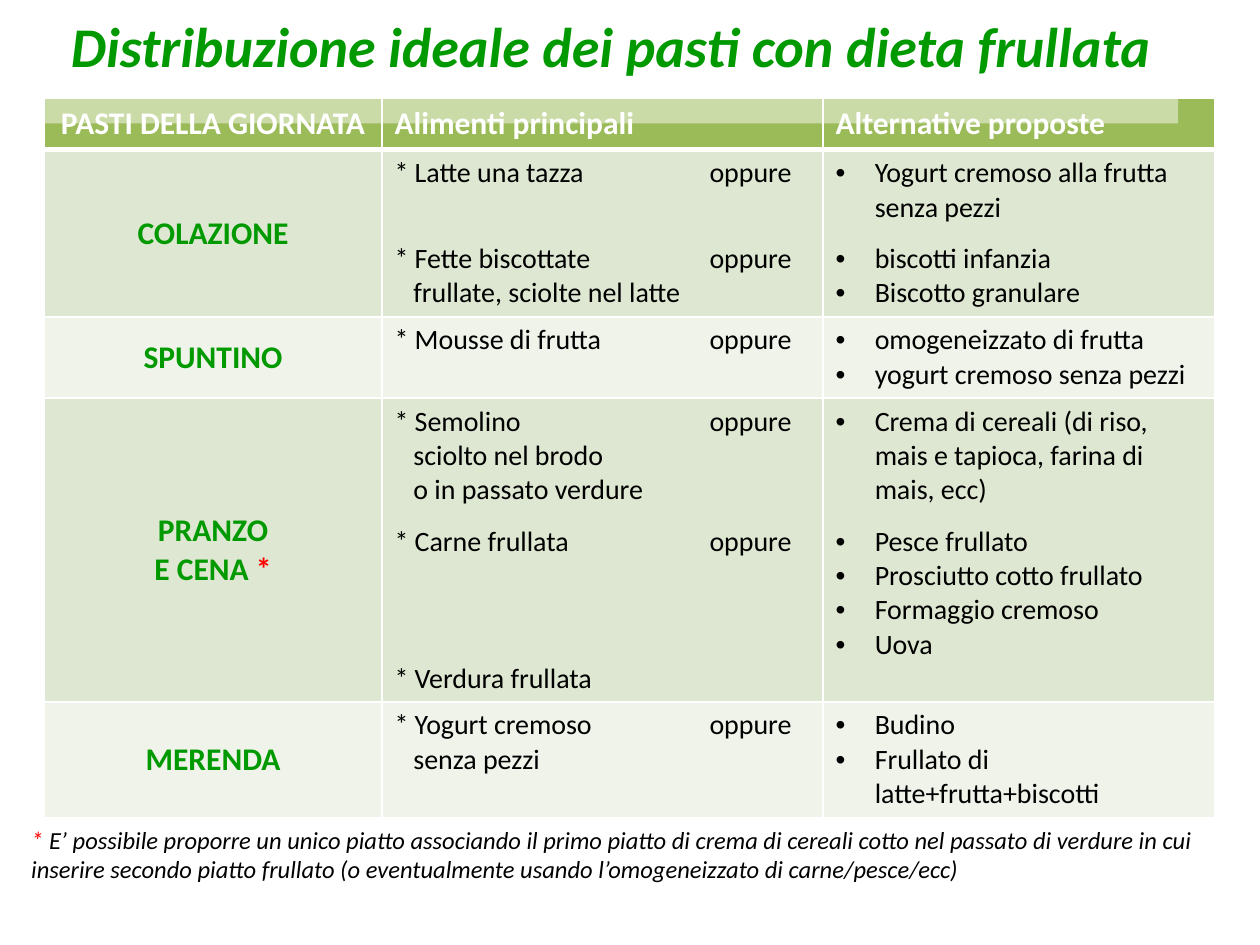
from lxml import etree
from pptx import Presentation
from pptx.dml.color import RGBColor
from pptx.enum.text import MSO_ANCHOR, PP_ALIGN
from pptx.oxml.ns import qn
from pptx.util import Cm, Pt

CENTER, LEFT = PP_ALIGN.CENTER, PP_ALIGN.LEFT
TOP, MIDDLE = MSO_ANCHOR.TOP, MSO_ANCHOR.MIDDLE

FONT = "Calibri"
GREEN, RED, BLACK, WHITE = "009900", "FF0000", "000000", "FFFFFF"
HEADER_FILL = "9BBB59"
BAND_FILLS = ["DEE7D1", "EFF3EA"]

COLUMN_WIDTHS = [6.81, 8.89, 7.9]
ROW_HEIGHTS = [1.04, 3.35, 1.64, 6.12, 2.32]
TAB_STOP = 6.35
CONTINUATION_INDENT = 0.38
BULLET_INDENT = 0.79

HEADERS = ["PASTI DELLA GIORNATA", "Alimenti principali", "Alternative proposte"]

# Each meal: name lines, main foods and alternatives as (text, space before)
# A main food starts with "*"; any other line continues the food above it
MEALS = [
    (["COLAZIONE"],
     [("* Latte una tazza\toppure", 0),
      ("* Fette biscottate\toppure", 29.5),
      ("frullate, sciolte nel latte", 0)],
     [("Yogurt cremoso alla frutta senza pezzi", 0),
      ("biscotti infanzia", 10),
      ("Biscotto granulare", 0)]),
    (["SPUNTINO"],
     [("* Mousse di frutta\toppure", 0)],
     [("omogeneizzato di frutta", 0),
      ("yogurt cremoso senza pezzi", 0)]),
    (["PRANZO", "E CENA *"],
     [("* Semolino\toppure", 0),
      ("sciolto nel brodo", 0),
      ("o in passato verdure", 0),
      ("* Carne frullata\toppure", 10),
      ("* Verdura frullata", 58.5)],
     [("Crema di cereali (di riso, mais e tapioca, farina di mais, ecc)", 0),
      ("Pesce frullato", 10),
      ("Prosciutto cotto frullato", 0),
      ("Formaggio cremoso", 0),
      ("Uova", 0)]),
    (["MERENDA"],
     [("* Yogurt cremoso\toppure", 0),
      ("senza pezzi", 0)],
     [("Budino", 0),
      ("Frullato di latte+frutta+biscotti", 0)]),
]

FOOTNOTE = ("E’ possibile proporre un unico piatto associando il primo piatto di crema "
            "di cereali cotto nel passato di verdure in cui inserire secondo piatto "
            "frullato (o eventualmente usando l’omogeneizzato di carne/pesce/ecc)")


def rgb(value):
    return RGBColor.from_string(value)


def add_span(para, text, size=16, color=BLACK, bold=False, italic=False):
    span = para.add_run()
    span.text = text
    font = span.font
    font.name, font.size, font.bold, font.italic = FONT, Pt(size), bold, italic
    font.color.rgb = rgb(color)


def add_para(frame, text, align=LEFT, gap=0, **style):
    """Write a paragraph, using the frame's first one while it is empty."""
    para = frame.paragraphs[0]
    if para.runs:
        para = frame.add_paragraph()
    para.alignment = align
    para.space_before = Pt(gap)
    add_span(para, text, **style)
    return para


def set_indent(para, margin, first_line=0):
    properties = para._p.get_or_add_pPr()
    properties.set("marL", str(Cm(margin)))
    properties.set("indent", str(Cm(first_line)))
    return properties


def add_bullet(frame, text, gap):
    para = add_para(frame, text, gap=gap)
    properties = set_indent(para, BULLET_INDENT, -BULLET_INDENT)
    etree.SubElement(properties, qn("a:buFont"), typeface="Arial")
    etree.SubElement(properties, qn("a:buChar"), char="•")


def add_food(frame, text, gap):
    para = add_para(frame, text, gap=gap)
    if not text.startswith("*"):
        set_indent(para, CONTINUATION_INDENT)
    elif "\t" in text:
        tabs = etree.SubElement(para._p.get_or_add_pPr(), qn("a:tabLst"))
        etree.SubElement(tabs, qn("a:tab"), pos=str(Cm(TAB_STOP)), algn="l")


def format_cell(cell, fill, anchor, top=1, bottom=1):
    """Set white borders (widths in points), fill and vertical anchor."""
    properties = cell._tc.get_or_add_tcPr()
    for side, width in (("L", 1), ("R", 1), ("T", top), ("B", bottom)):
        line = etree.SubElement(properties, qn(f"a:ln{side}"), w=str(Pt(width)))
        solid = etree.SubElement(line, qn("a:solidFill"))
        etree.SubElement(solid, qn("a:srgbClr"), val=WHITE)
    cell.fill.solid()
    cell.fill.fore_color.rgb = rgb(fill)
    cell.vertical_anchor = anchor


def add_meal_table(page):
    frame = page.shapes.add_table(
        len(ROW_HEIGHTS), len(COLUMN_WIDTHS), Cm(0.89), Cm(1.98),
        Cm(sum(COLUMN_WIDTHS)), Cm(sum(ROW_HEIGHTS)))
    table = frame.table
    table.horz_banding = False
    for column, width in zip(table.columns, COLUMN_WIDTHS):
        column.width = Cm(width)
    for row, height in zip(table.rows, ROW_HEIGHTS):
        row.height = Cm(height)

    # Header row
    for index, text in enumerate(HEADERS):
        cell = table.cell(0, index)
        format_cell(cell, HEADER_FILL, MIDDLE if index else TOP, bottom=3)
        add_para(cell.text_frame, text, align=LEFT if index else CENTER,
                 size=18, color=WHITE, bold=True)

    # One row for each meal
    for number, (names, foods, alternatives) in enumerate(MEALS, 1):
        cells = [table.cell(number, index) for index in range(len(HEADERS))]
        for index, cell in enumerate(cells):
            format_cell(cell, BAND_FILLS[(number - 1) % 2], TOP if index else MIDDLE,
                        top=3 if number == 1 else 1)
        name_frame, food_frame, alternative_frame = [cell.text_frame for cell in cells]
        for name in names:
            label, star, _ = name.partition("*")
            para = add_para(name_frame, label, align=CENTER,
                            size=18, color=GREEN, bold=True)
            if star:
                add_span(para, star, size=18, color=RED, bold=True)
        for text, gap in foods:
            add_food(food_frame, text, gap)
        for text, gap in alternatives:
            add_bullet(alternative_frame, text, gap)
    return frame


def format_title(title, text):
    title.left, title.top, title.width, title.height = Cm(0.89), Cm(-0.69), Cm(22.86), Cm(3.18)
    title.fill.solid()
    title.fill.fore_color.rgb = rgb(WHITE)
    color = title._element.spPr.find(".//" + qn("a:srgbClr"))
    etree.SubElement(color, qn("a:alpha"), val="47000")
    title.text_frame.vertical_anchor = MIDDLE
    add_para(title.text_frame, text, align=CENTER,
             size=32, color=GREEN, bold=True, italic=True)


def add_footnote(page):
    box = page.shapes.add_textbox(Cm(0.38), Cm(16.5), Cm(25), Cm(1.45))
    box.text_frame.word_wrap = True
    para = add_para(box.text_frame, "* ", size=14, color=RED, italic=True)
    add_span(para, FOOTNOTE, size=14, italic=True)


def main():
    deck = Presentation()
    deck.slide_width, deck.slide_height = Cm(25.4), Cm(19.05)
    page = deck.slides.add_slide(deck.slide_layouts[5])
    title = page.shapes.title
    format_title(title, "Distribuzione ideale dei pasti con dieta frullata")
    table = add_meal_table(page)
    # The translucent title lies over the table's header
    table._element.addnext(title._element)
    add_footnote(page)
    deck.save("out.pptx")


if __name__ == "__main__":
    main()
